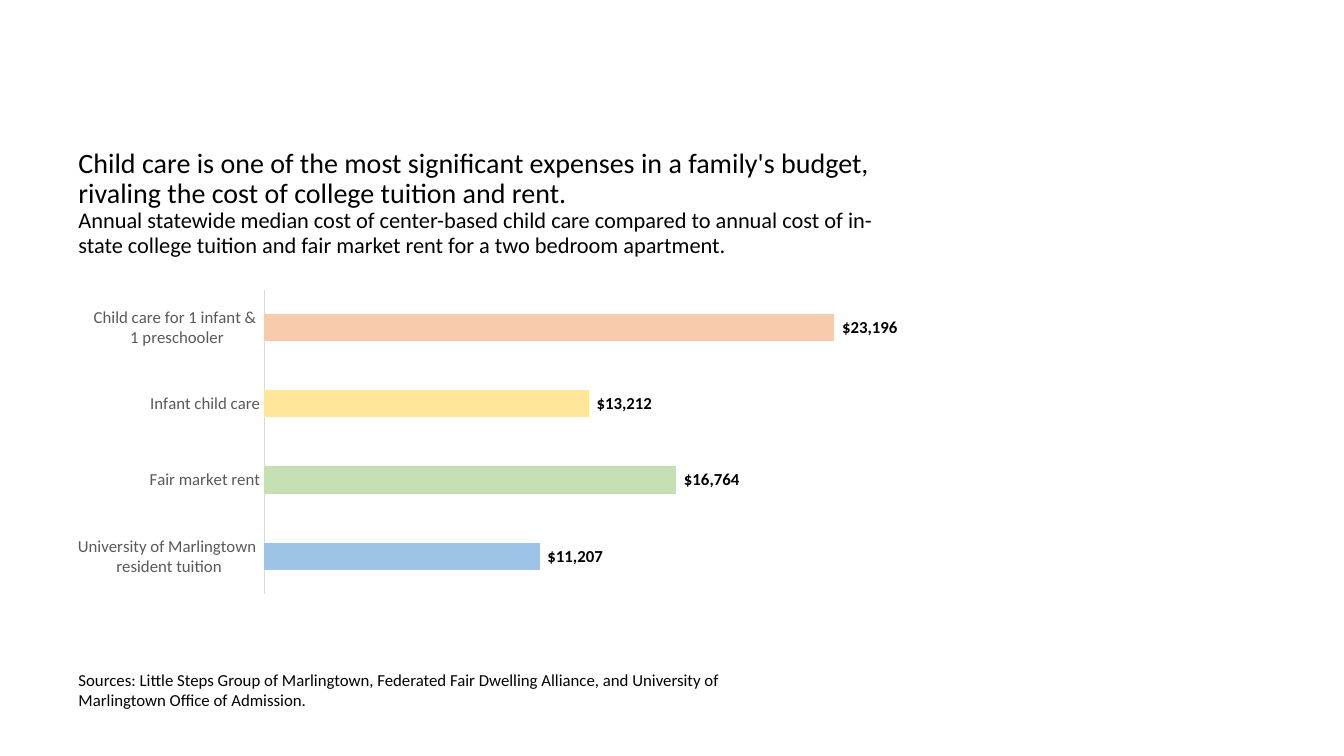
"""Build a slide comparing child care costs with tuition and rent."""
from dataclasses import dataclass

from lxml import etree
from pptx import Presentation
from pptx.chart.chart import Chart
from pptx.chart.data import CategoryChartData
from pptx.dml.color import RGBColor
from pptx.enum.chart import XL_CHART_TYPE, XL_LABEL_POSITION, XL_TICK_MARK
from pptx.enum.text import MSO_ANCHOR
from pptx.oxml.ns import qn
from pptx.slide import Slide
from pptx.text.text import Font
from pptx.util import Inches, Pt

BAR_CLUSTERED = XL_CHART_TYPE.BAR_CLUSTERED
OUTSIDE_END = XL_LABEL_POSITION.OUTSIDE_END
NO_TICK = XL_TICK_MARK.NONE
MIDDLE, TOP = MSO_ANCHOR.MIDDLE, MSO_ANCHOR.TOP

SLIDE_WIDTH, SLIDE_HEIGHT = Inches(13.33), Inches(7.5)
FACE = "Calibri"
BLACK, GREY, AXIS_GREY = "000000", "595959", "D9D9D9"
DOLLARS = '_("$"* #,##0_)'
LARGEST_COST = 25000
PLOT_SHARES = {"x": 0.235, "y": 0.02, "w": 0.738, "h": 0.96}


@dataclass(frozen=True)
class Area:
    """A region in percent of the slide's width and height."""
    left: float
    top: float
    width: float
    height: float

    def box(self) -> tuple[int, int, int, int]:
        return (
            int(SLIDE_WIDTH * self.left / 100),
            int(SLIDE_HEIGHT * self.top / 100),
            int(SLIDE_WIDTH * self.width / 100),
            int(SLIDE_HEIGHT * self.height / 100),
        )


@dataclass(frozen=True)
class Line:
    text: str
    size: float


@dataclass(frozen=True)
class Passage:
    area: Area
    lines: tuple[Line, ...]
    anchor: MSO_ANCHOR = TOP
    spacing: float = 1.0


@dataclass(frozen=True)
class Cost:
    label: str
    dollars: int
    color: str


HEADING = Passage(
    Area(5.1, 16.4, 61.97, 21.07),
    (
        Line("Child care is one of the most significant expenses in a family's budget, "
             "rivaling the cost of college tuition and rent.", 20),
        Line("Annual statewide median cost of center-based child care compared to annual "
             "cost of in-state college tuition and fair market rent for a two bedroom "
             "apartment.", 16),
    ),
    MIDDLE,
    0.9,
)
SOURCES = Passage(
    Area(5.1, 87.87, 53.41, 6.67),
    (
        Line("Sources: Little Steps Group of Marlingtown, Federated Fair Dwelling "
             "Alliance, and University of Marlingtown Office of Admission.", 12),
    ),
)
CHART_AREA = Area(5.1, 37.47, 61.97, 42)
COSTS = (
    Cost("University of Marlingtown \nresident tuition", 11207, "9DC3E6"),
    Cost("Fair market rent", 16764, "C5E0B4"),
    Cost("Infant child care", 13212, "FFE699"),
    Cost("Child care for 1 infant & \n1 preschooler", 23196, "F8CBAD"),
)


def rgb(color: str) -> RGBColor:
    return RGBColor.from_string(color)


def style_font(font: Font, size: float, color: str, bold: bool = False) -> None:
    font.name, font.size, font.bold = FACE, Pt(size), bold
    font.color.rgb = rgb(color)


def add_passage(slide: Slide, passage: Passage) -> None:
    frame = slide.shapes.add_textbox(*passage.area.box()).text_frame
    frame.word_wrap = True
    frame.vertical_anchor = passage.anchor
    for index, line in enumerate(passage.lines):
        paragraph = frame.add_paragraph() if index else frame.paragraphs[0]
        paragraph.text = line.text
        paragraph.line_spacing = passage.spacing
        style_font(paragraph.font, line.size, BLACK)


def fix_plot_layout(chart: Chart) -> None:
    plot_area = chart.plots[0]._element.getparent()
    for former in plot_area.findall(qn("c:layout")):
        plot_area.remove(former)
    layout = etree.Element(qn("c:layout"))
    manual = etree.SubElement(layout, qn("c:manualLayout"))
    settings = {"layoutTarget": "inner", "xMode": "edge", "yMode": "edge", **PLOT_SHARES}
    for tag, value in settings.items():
        etree.SubElement(manual, qn(f"c:{tag}")).set("val", str(value))
    plot_area.insert(0, layout)


def add_cost_chart(slide: Slide, area: Area, costs: tuple[Cost, ...]) -> None:
    data = CategoryChartData()
    data.categories = [cost.label for cost in costs]
    data.add_series("Series 1", [cost.dollars for cost in costs])
    chart = slide.shapes.add_chart(BAR_CLUSTERED, *area.box(), data).chart
    chart.has_legend = chart.has_title = False
    style_font(chart.font, 10, BLACK)

    cost_axis = chart.value_axis
    cost_axis.minimum_scale, cost_axis.maximum_scale = 0, LARGEST_COST
    cost_axis.has_major_gridlines = cost_axis.visible = False

    label_axis = chart.category_axis
    label_axis.major_tick_mark = label_axis.minor_tick_mark = NO_TICK
    label_axis.format.line.color.rgb = rgb(AXIS_GREY)
    label_axis.format.line.width = Pt(0.75)
    style_font(label_axis.tick_labels.font, 12, GREY)

    plot = chart.plots[0]
    plot.gap_width, plot.vary_by_categories = 182, False
    series = plot.series[0]
    for index, cost in enumerate(costs):
        fill = series.points[index].format.fill
        fill.solid()
        fill.fore_color.rgb = rgb(cost.color)

    amounts = series.data_labels
    amounts.show_value = True
    amounts.position = OUTSIDE_END
    amounts.number_format, amounts.number_format_is_linked = DOLLARS, False
    style_font(amounts.font, 12, BLACK, bold=True)
    fix_plot_layout(chart)


def main() -> None:
    deck = Presentation()
    deck.slide_width, deck.slide_height = SLIDE_WIDTH, SLIDE_HEIGHT
    slide = deck.slides.add_slide(deck.slide_layouts[6])
    add_passage(slide, HEADING)
    add_cost_chart(slide, CHART_AREA, COSTS)
    add_passage(slide, SOURCES)
    deck.save("out.pptx")


if __name__ == "__main__":
    main()
